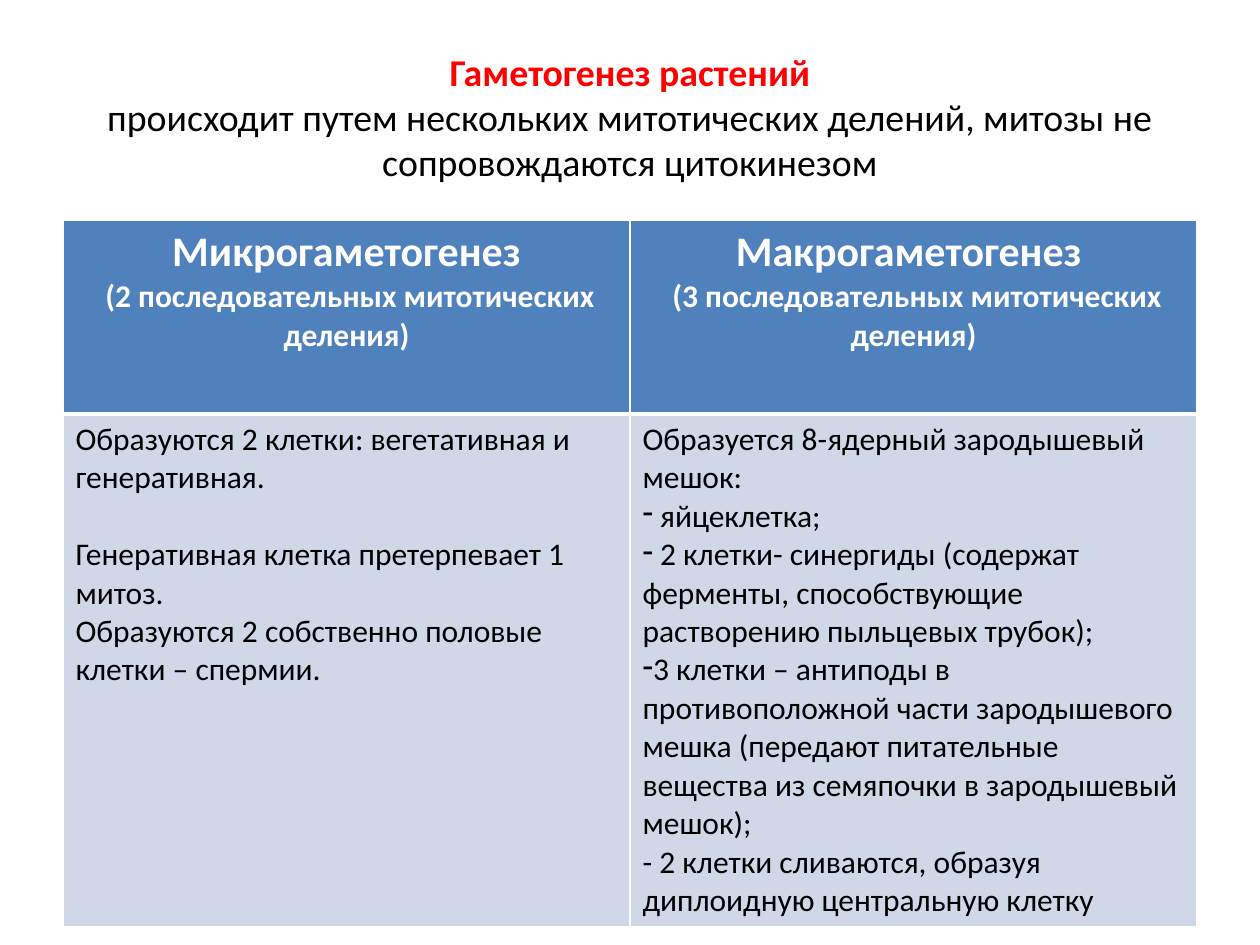
from dataclasses import dataclass

from lxml.etree import SubElement as Sub
from pptx import Presentation
from pptx.dml.color import RGBColor as Rgb
from pptx.enum.text import MSO_ANCHOR as Anchor, MSO_AUTO_SIZE as Fit, PP_ALIGN as Align
from pptx.oxml import parse_xml
from pptx.oxml.ns import nsdecls, qn
from pptx.util import Pt


@dataclass(frozen=True)
class Theme:
    font: str = "Calibri"
    red: str = "FF0000"
    black: str = "000000"
    white: str = "FFFFFF"
    blue: str = "4F81BD"
    pale: str = "D0D8E8"
    title: float = 21.6
    head: int = 24
    body: int = 18
    gap: int = 22
    thin: int = 1
    thick: int = 3


THEME = Theme()
DPI = 126
LEFT, WIDTH = 63, 1134

LEAD = "Гаметогенез растений"
REST = "происходит путем нескольких митотических делений, митозы не сопровождаются цитокинезом"
HEADS = [
    ("Микрогаметогенез", " (2 последовательных митотических деления)"),
    ("Макрогаметогенез ", " (3 последовательных митотических деления)"),
]
MICRO = [
    "Образуются 2 клетки: вегетативная и генеративная.",
    "Генеративная клетка претерпевает 1 митоз.",
    "Образуются 2 собственно половые клетки – спермии.",
]
MACRO = [
    "Образуется 8-ядерный зародышевый мешок:",
    " яйцеклетка;",
    " 2 клетки- синергиды (содержат ферменты, способствующие растворению пыльцевых трубок);",
    "3 клетки – антиподы в противоположной части зародышевого мешка "
    "(передают питательные вещества из семяпочки в зародышевый мешок);",
    "- 2 клетки сливаются, образуя диплоидную центральную клетку",
]


def px(n):
    return round(n * 914400 / DPI)


def style(run, size, color, bold=False):
    font = run.font
    font.name = THEME.font
    font.size = Pt(size)
    font.bold = bold
    font.color.rgb = Rgb.from_string(color)


def add_title(slide):
    title = slide.shapes.title
    title.left, title.top = px(LEFT), px(38)
    title.width, title.height = px(WIDTH), px(157)
    frame = title.text_frame
    frame.text = LEAD
    frame.word_wrap = True
    frame.auto_size = Fit.NONE
    frame.vertical_anchor = Anchor.MIDDLE
    para = frame.paragraphs[0]
    para.alignment = Align.CENTER
    style(para.runs[0], THEME.title, THEME.red, True)
    para.add_line_break()
    run = para.add_run()
    run.text = REST
    style(run, THEME.title, THEME.black)


def set_edges(cell, top, base):
    props = cell._tc.get_or_add_tcPr()
    sides = {"L": THEME.thin, "R": THEME.thin, "T": top, "B": base}
    for spot, (side, width) in enumerate(sides.items()):
        line = parse_xml(
            f'<a:ln{side} {nsdecls("a")} w="{Pt(width)}"><a:solidFill>'
            f'<a:srgbClr val="{THEME.white}"/></a:solidFill></a:ln{side}>'
        )
        props.insert(spot, line)


def fill_cell(cell, lines, color):
    cell.fill.solid()
    cell.fill.fore_color.rgb = Rgb.from_string(color)
    cell.text_frame.text = "\n".join(lines)
    return cell.text_frame.paragraphs


def add_head(cell, lines):
    paras = fill_cell(cell, lines, THEME.blue)
    for para, size in zip(paras, (THEME.head, THEME.body)):
        para.alignment = Align.CENTER
        style(para.runs[0], size, THEME.white, True)
    set_edges(cell, THEME.thin, THEME.thick)


def add_body(cell, lines):
    paras = fill_cell(cell, lines, THEME.pale)
    for para in paras:
        style(para.runs[0], THEME.body, THEME.black)
    set_edges(cell, THEME.thick, THEME.thin)
    return paras


def add_dash(para):
    props = para._p.get_or_add_pPr()
    Sub(props, qn("a:buFontTx"))
    Sub(props, qn("a:buChar")).set("char", "-")


def add_grid(slide):
    rows = (194, 511)
    frame = slide.shapes.add_table(2, 2, px(LEFT), px(220), px(WIDTH), px(sum(rows)))
    grid = frame.table
    for row, height in zip(grid.rows, rows):
        row.height = px(height)
    for col, lines in enumerate(HEADS):
        add_head(grid.cell(0, col), lines)
    micro = add_body(grid.cell(1, 0), MICRO)
    micro[1].space_before = Pt(THEME.gap)
    macro = add_body(grid.cell(1, 1), MACRO)
    for para in macro[1:4]:
        add_dash(para)


def main():
    deck = Presentation()
    deck.slide_width, deck.slide_height = px(1260), px(945)
    slide = deck.slides.add_slide(deck.slide_layouts[5])
    add_title(slide)
    add_grid(slide)
    deck.save("out.pptx")


if __name__ == "__main__":
    main()
